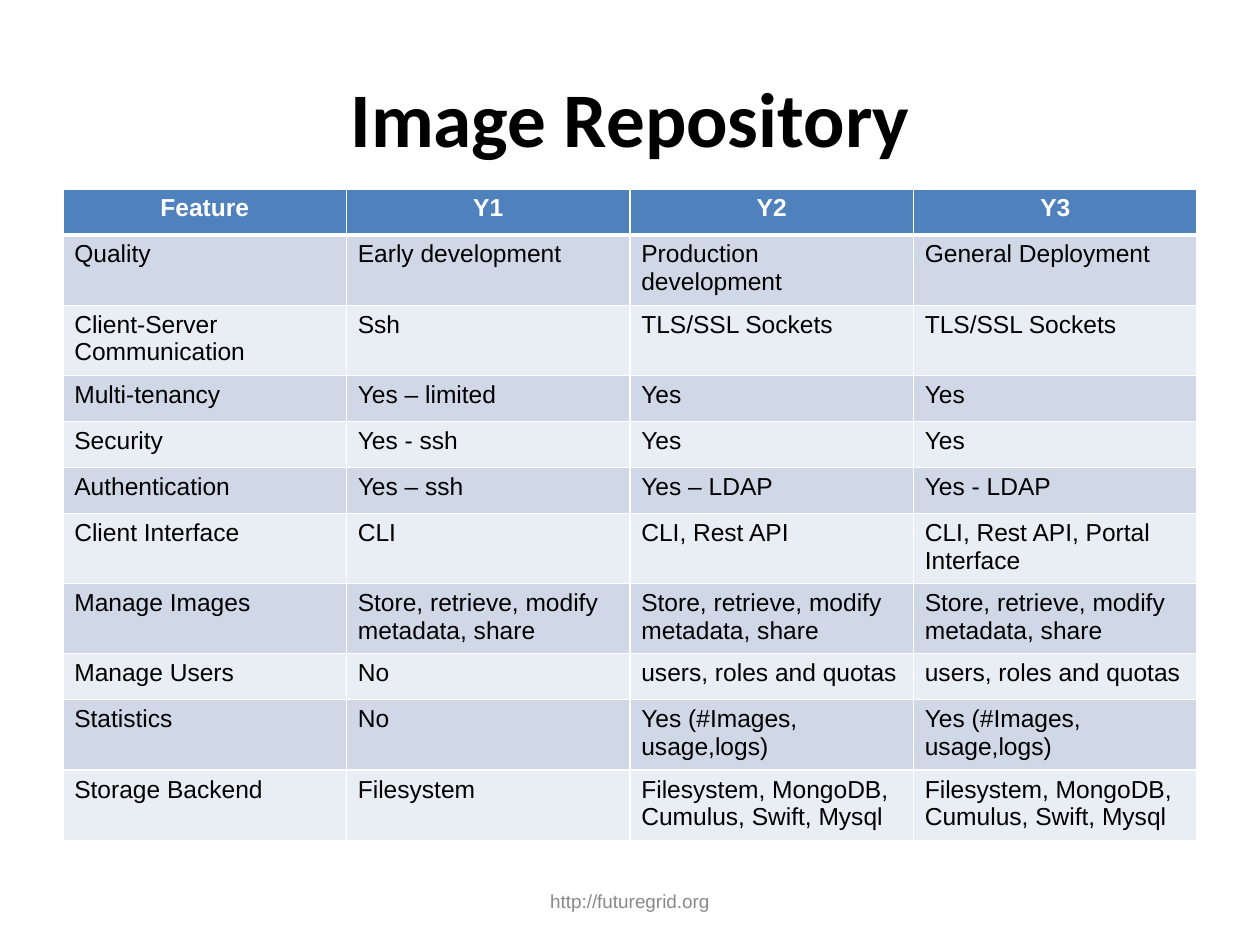
from lxml.etree import SubElement
from pptx import Presentation
from pptx.dml.color import RGBColor
from pptx.enum.text import MSO_ANCHOR, PP_ALIGN
from pptx.oxml.ns import qn
from pptx.util import Pt

COLORS = {
    "title": "000000",
    "footer": "898989",
    "header text": "FFFFFF",
    "body text": "000000",
    "border": "FFFFFF",
    "header": "4F81BD",
    "odd row": "D0D8E8",
    "even row": "E9EDF4",
}

IMAGES = "Store, retrieve, modify metadata, share"
QUOTAS = "users, roles and quotas"
STATISTICS = "Yes (#Images, usage,logs)"
BACKENDS = "Filesystem, MongoDB, Cumulus, Swift, Mysql"

FEATURES = [
    ("Feature", "Y1", "Y2", "Y3"),
    ("Quality", "Early development", "Production development", "General Deployment"),
    ("Client-Server Communication", "Ssh", "TLS/SSL Sockets", "TLS/SSL Sockets"),
    ("Multi-tenancy", "Yes – limited", "Yes", "Yes"),
    ("Security", "Yes - ssh", "Yes", "Yes"),
    ("Authentication", "Yes – ssh", "Yes – LDAP", "Yes - LDAP"),
    ("Client Interface", "CLI", "CLI, Rest API", "CLI, Rest API, Portal Interface"),
    ("Manage Images", IMAGES, IMAGES, IMAGES),
    ("Manage Users", "No", QUOTAS, QUOTAS),
    ("Statistics", "No", STATISTICS, STATISTICS),
    ("Storage Backend", "Filesystem", BACKENDS, BACKENDS),
]


def add_run(paragraph, text, size, color, font="Arial", bold=False):
    """Add one formatted run to a paragraph."""
    run = paragraph.add_run()
    run.text = text
    run.font.name = font
    run.font.size = Pt(size)
    run.font.bold = bold
    run.font.color.rgb = RGBColor.from_string(COLORS[color])


def add_centered_text(slide, text, left, top, width, height, size, color, **style):
    """Add a text box with its text in the middle."""
    shape = slide.shapes.add_textbox(Pt(left), Pt(top), Pt(width), Pt(height))
    frame = shape.text_frame
    frame.word_wrap = True
    frame.vertical_anchor = MSO_ANCHOR.MIDDLE
    frame.margin_left = frame.margin_right = Pt(8)
    frame.margin_top = frame.margin_bottom = Pt(4)
    paragraph = frame.paragraphs[0]
    paragraph.alignment = PP_ALIGN.CENTER
    add_run(paragraph, text, size, color, **style)


def set_borders(cell, top, bottom):
    """Draw the four cell borders, with given top and bottom widths."""
    properties = cell._tc.get_or_add_tcPr()
    for side, width in (("L", 1), ("R", 1), ("T", top), ("B", bottom)):
        line = SubElement(properties, qn(f"a:ln{side}"), w=str(Pt(width)))
        fill = SubElement(line, qn("a:solidFill"))
        SubElement(fill, qn("a:srgbClr"), val=COLORS["border"])


def fill_cell(cell, text, row):
    """Write and style one table cell according to its row."""
    is_header = row == 0
    set_borders(cell, top=3 if row == 1 else 1, bottom=3 if is_header else 1)
    band = "header" if is_header else "odd row" if row % 2 else "even row"
    cell.fill.solid()
    cell.fill.fore_color.rgb = RGBColor.from_string(COLORS[band])
    paragraph = cell.text_frame.paragraphs[0]
    paragraph.alignment = PP_ALIGN.CENTER if is_header else PP_ALIGN.LEFT
    add_run(paragraph, text, 15.56, "header text" if is_header else "body text", bold=is_header)


def add_feature_table(slide, left, top, width, row_height):
    """Add the table of repository features by year."""
    rows, columns = len(FEATURES), len(FEATURES[0])
    table = slide.shapes.add_table(
        rows, columns, Pt(left), Pt(top), Pt(width), Pt(row_height * rows)
    ).table
    for row, texts in enumerate(FEATURES):
        table.rows[row].height = Pt(row_height)
        for column, text in enumerate(texts):
            fill_cell(table.cell(row, column), text, row)


def main():
    """Build the slide and save it."""
    presentation = Presentation()
    presentation.slide_width = Pt(800)
    presentation.slide_height = Pt(600)
    slide = presentation.slides.add_slide(presentation.slide_layouts[6])
    add_centered_text(slide, "Image Repository", 40, 24, 720, 100, 49, "title",
                      font="Calibri", bold=True)
    add_centered_text(slide, "http://futuregrid.org", 273.5, 556, 253, 32, 12, "footer")
    add_feature_table(slide, 40, 120, 720, 29.2)
    presentation.save("out.pptx")


if __name__ == "__main__":
    main()
